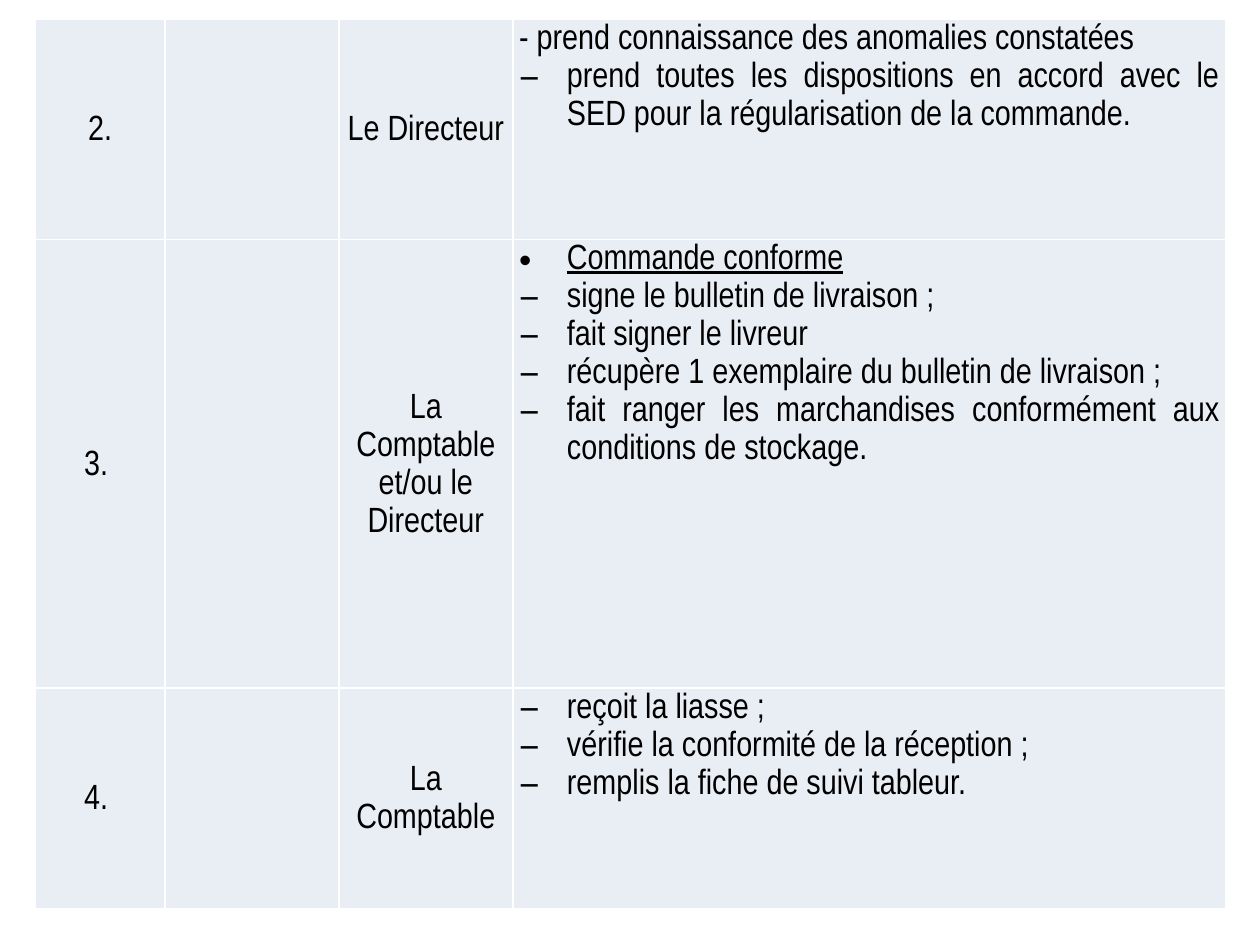
from lxml import etree
from pptx import Presentation
from pptx.dml.color import RGBColor
from pptx.enum.text import MSO_ANCHOR, PP_ALIGN
from pptx.oxml.ns import qn
from pptx.util import Inches, Pt

COLORS = {"text": "000000", "cell": "E9EDF4", "border": "FFFFFF"}
FONT = "Arial Narrow"
COLUMN_WIDTHS = [1.03, 1.38, 1.38, 5.66]
ROW_HEIGHTS = [1.75, 3.56, 1.75]
DASH, DOT = "−", "•"

# Number, person in charge, tasks as (bullet, wording)
STEPS = [
    ("2.", "Le Directeur", [
        (None, "- prend connaissance des anomalies constatées"),
        (DASH, "prend toutes les dispositions en accord avec le SED "
               "pour la régularisation de la commande."),
    ]),
    ("3. ", "La Comptable et/ou le Directeur", [
        (DOT, "Commande conforme"),
        (DASH, "signe le bulletin de livraison ;"),
        (DASH, "fait signer le livreur"),
        (DASH, "récupère 1 exemplaire du bulletin de livraison ;"),
        (DASH, "fait ranger les marchandises conformément aux "
               "conditions de stockage."),
    ]),
    ("4. ", "La Comptable", [
        (DASH, "reçoit la liasse ;"),
        (DASH, "vérifie la conformité de la réception ;"),
        (DASH, "remplis la fiche de suivi tableur."),
    ]),
]


def add_borders(cell):
    properties = cell._tc.get_or_add_tcPr()
    for index, side in enumerate(("lnL", "lnR", "lnT", "lnB")):
        line = etree.Element(qn(f"a:{side}"), w=str(Pt(1)))
        fill = etree.SubElement(line, qn("a:solidFill"))
        etree.SubElement(fill, qn("a:srgbClr"), val=COLORS["border"])
        properties.insert(index, line)


def format_cell(cell):
    cell.margin_left = cell.margin_right = Inches(0.05)
    cell.margin_top = cell.margin_bottom = 0
    cell.fill.solid()
    cell.fill.fore_color.rgb = RGBColor.from_string(COLORS["cell"])
    add_borders(cell)


def add_bullet(paragraph, character):
    """Give the paragraph a hanging indent and a bullet character."""
    properties = paragraph._p.get_or_add_pPr()
    properties.set("marL", str(Inches(0.38)))
    properties.set("indent", str(-Inches(0.38)))
    etree.SubElement(properties, qn("a:buFont"), typeface="Arial")
    etree.SubElement(properties, qn("a:buChar"), char=character)


def write_paragraph(paragraph, wording, alignment, bullet=None, space_before=0):
    paragraph.text = wording
    paragraph.alignment = alignment
    paragraph.line_spacing = 1.15
    paragraph.space_before = Pt(space_before)
    if bullet:
        add_bullet(paragraph, bullet)
    font = paragraph.font
    font.name = FONT
    font.size = Pt(20)
    font.color.rgb = RGBColor.from_string(COLORS["text"])
    font.underline = bullet == DOT


def write_centered(cell, wording, space_before=0):
    cell.vertical_anchor = MSO_ANCHOR.MIDDLE
    write_paragraph(cell.text_frame.paragraphs[0], wording, PP_ALIGN.CENTER,
                    space_before=space_before)


def write_tasks(cell, tasks):
    frame = cell.text_frame
    for index, (bullet, wording) in enumerate(tasks):
        paragraph = frame.add_paragraph() if index else frame.paragraphs[0]
        write_paragraph(paragraph, wording, PP_ALIGN.JUSTIFY, bullet)


def add_step_table(slide):
    table = slide.shapes.add_table(
        len(ROW_HEIGHTS), len(COLUMN_WIDTHS), Inches(0.28), Inches(0.15),
        Inches(sum(COLUMN_WIDTHS)), Inches(sum(ROW_HEIGHTS))).table
    table.first_row = table.horz_banding = False
    for column, width in zip(table.columns, COLUMN_WIDTHS):
        column.width = Inches(width)
    for row, height, (number, person, tasks) in zip(table.rows, ROW_HEIGHTS, STEPS):
        row.height = Inches(height)
        for cell in row.cells:
            format_cell(cell)
        write_centered(row.cells[0], number, space_before=6)
        write_centered(row.cells[2], person)
        write_tasks(row.cells[3], tasks)


def main():
    presentation = Presentation()
    presentation.slide_width = Inches(10)
    presentation.slide_height = Inches(7.5)
    slide = presentation.slides.add_slide(presentation.slide_layouts[6])
    add_step_table(slide)
    presentation.save("out.pptx")


if __name__ == "__main__":
    main()
